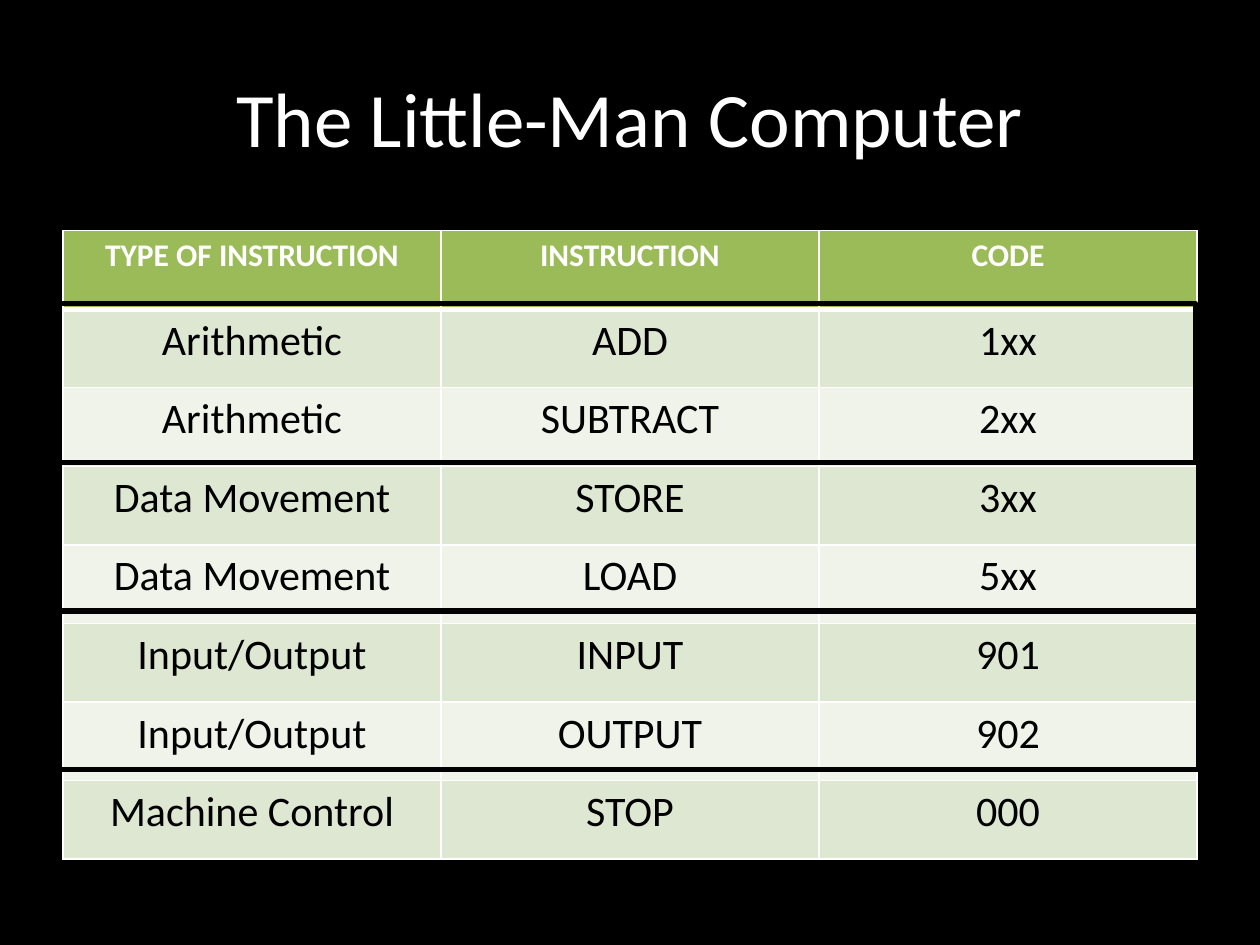
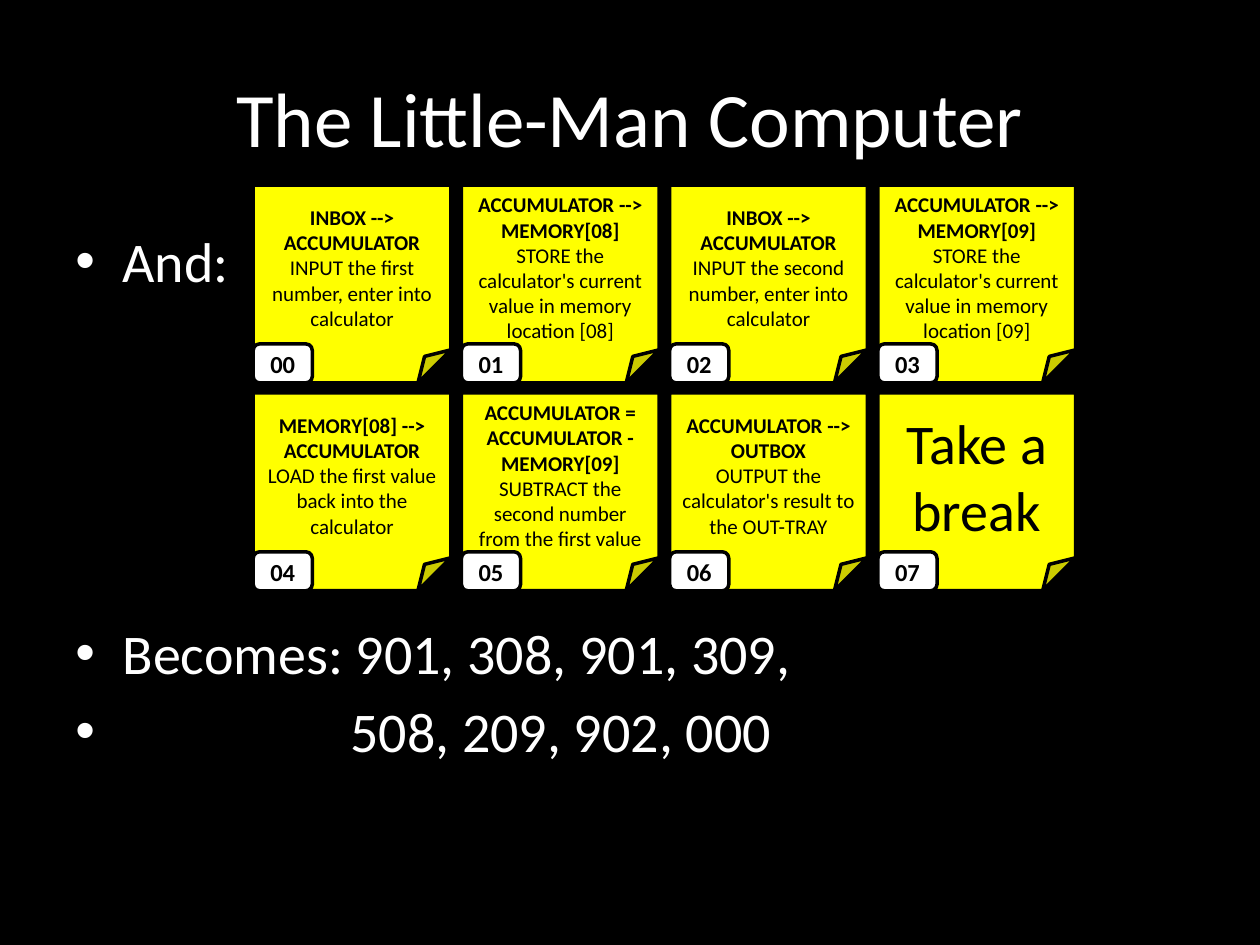
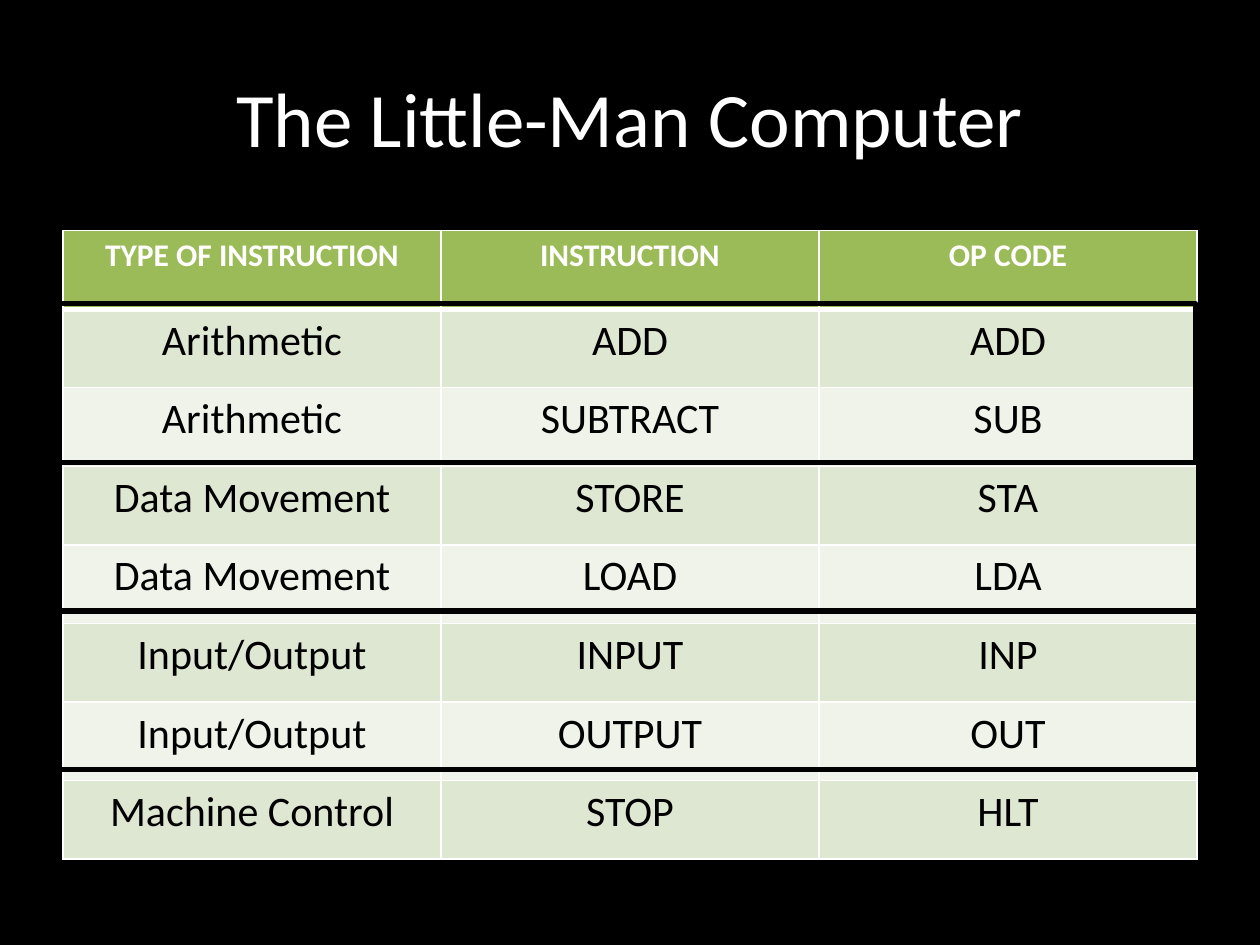
import pptx
import pptx.dml.color
import pptx.enum.shapes
import pptx.enum.text
import pptx.oxml
import pptx.oxml.ns
import pptx.util

Pt = pptx.util.Pt
SHAPE = pptx.enum.shapes.MSO_SHAPE
CENTER = pptx.enum.text.PP_ALIGN.CENTER
MIDDLE = pptx.enum.text.MSO_ANCHOR.MIDDLE
BLACK, WHITE, YELLOW = "000000", "FFFFFF", "FFFF00"
GREEN, BAND_DARK, BAND_LIGHT = "9BBB59", "DEE7D1", "EFF3EA"


def color(hex_text):
    return pptx.dml.color.RGBColor.from_string(hex_text)


def write(para, text, size, hex_text, bold=False, align=CENTER):
    para.alignment = align
    span = para.add_run()
    span.text = text
    span.font.name = "Calibri"
    span.font.size = Pt(size)
    span.font.bold = bold
    span.font.color.rgb = color(hex_text)


deck = pptx.Presentation()
deck.slide_width, deck.slide_height = Pt(720), Pt(540)
background = deck.slide_master.background.fill
background.solid()
background.fore_color.rgb = color(BLACK)

pages = []
for number in range(3):
    page = deck.slides.add_slide(deck.slide_layouts[5])
    title = page.shapes.title
    title.left, title.top, title.width, title.height = Pt(36), Pt(21.6), Pt(648), Pt(90)
    title.text_frame.vertical_anchor = MIDDLE
    write(title.text_frame.paragraphs[0], "The Little-Man Computer", 44, WHITE)
    pages.append(page)

instructions = [
    ("TYPE OF INSTRUCTION", "INSTRUCTION"),
    ("Arithmetic", "ADD"),
    ("Arithmetic", "SUBTRACT"),
    ("Data Movement", "STORE"),
    ("Data Movement", "LOAD"),
    ("Input/Output", "INPUT"),
    ("Input/Output", "OUTPUT"),
    ("Machine Control", "STOP"),
]
code_tables = [
    (pages[0], ["CODE", "1xx", "2xx", "3xx", "5xx", "901", "902", "000"]),
    (pages[2], ["OP CODE", "ADD", "SUB", "STA", "LDA", "INP", "OUT", "HLT"]),
]
group_frames = [(31, 173.5, 90.7), (32.4, 264.2, 85), (32.4, 349.2, 90.7)]

for page, codes in code_tables:
    table = page.shapes.add_table(8, 3, Pt(36), Pt(131.8), Pt(648), Pt(359.2)).table
    for row, (instruction, code) in enumerate(zip(instructions, codes)):
        table.rows[row].height = Pt(44.9)
        for column, text in enumerate([*instruction, code]):
            cell = table.cell(row, column)
            properties = cell._tc.get_or_add_tcPr()
            for side in "LRTB":
                thick = (row, side) in [(0, "B"), (1, "T")]
                properties.append(pptx.oxml.parse_xml(
                    f'<a:ln{side} {pptx.oxml.ns.nsdecls("a")} w="{Pt(3 if thick else 1)}">'
                    f'<a:solidFill><a:srgbClr val="{WHITE}"/></a:solidFill></a:ln{side}>'))
            cell.fill.solid()
            cell.fill.fore_color.rgb = color(
                GREEN if row == 0 else BAND_DARK if row % 2 else BAND_LIGHT)
            para = cell.text_frame.paragraphs[0]
            if row == 0:
                write(para, text, 18, WHITE, bold=True)
            else:
                write(para, text, 24, BLACK)
    for left, top, height in group_frames:
        frame = page.shapes.add_shape(SHAPE.RECTANGLE, Pt(left), Pt(top), Pt(652.3), Pt(height))
        frame.shadow.inherit = False
        frame.fill.background()
        frame.line.color.rgb = color(BLACK)
        frame.line.width = Pt(3)

page = pages[1]
box = page.shapes.add_textbox(Pt(36), Pt(126), Pt(648), Pt(356.4))
box.text_frame.word_wrap = True
bullets = [
    ("And:", 27, 0),
    ("Becomes: 901, 308, 901, 309,", 27, 185.5),
    ("508, 209, 902, 000", 157.2, 5.9),
]
for index, (text, indent, gap) in enumerate(bullets):
    para = box.text_frame.add_paragraph() if index else box.text_frame.paragraphs[0]
    properties = para._p.get_or_add_pPr()
    properties.set("marL", str(Pt(indent)))
    properties.set("indent", str(-Pt(indent)))
    for bullet in ('buClr {}><a:srgbClr val="FFFFFF"/></a:buClr>',
                   'buFont {} typeface="Arial"/>', 'buChar {} char="•"/>'):
        properties.append(pptx.oxml.parse_xml("<a:" + bullet.format(pptx.oxml.ns.nsdecls("a"))))
    if gap:
        para.space_before = Pt(gap)
    write(para, text, 32, WHITE, align=pptx.enum.text.PP_ALIGN.LEFT)

notes = [
    ("INBOX --> ACCUMULATOR", "INPUT the first number, enter into calculator"),
    ("ACCUMULATOR --> MEMORY[08]",
     "STORE the calculator's current value in memory location [08]"),
    ("INBOX --> ACCUMULATOR", "INPUT the second number, enter into calculator"),
    ("ACCUMULATOR --> MEMORY[09]",
     "STORE the calculator's current value in memory location [09]"),
    ("MEMORY[08] --> ACCUMULATOR", "LOAD the first value back into the calculator"),
    ("ACCUMULATOR = ACCUMULATOR - MEMORY[09]",
     "SUBTRACT the second number from the first value"),
    ("ACCUMULATOR --> OUTBOX", "OUTPUT the calculator's result to the OUT-TRAY"),
    ("", "Take a break"),
]
for address, (transfer, action) in enumerate(notes):
    left = 144.7 + address % 4 * 119
    top = 105.8 + address // 4 * 118.8
    note = page.shapes.add_shape(SHAPE.FOLDED_CORNER, Pt(left), Pt(top), Pt(113), Pt(113))
    label = page.shapes.add_shape(
        SHAPE.ROUNDED_RECTANGLE, Pt(left), Pt(top + 90.7), Pt(33.8), Pt(22.3))
    for shape, fill in ((note, YELLOW), (label, WHITE)):
        shape.shadow.inherit = False
        shape.fill.solid()
        shape.fill.fore_color.rgb = color(fill)
        shape.line.color.rgb = color(BLACK)
        shape.line.width = Pt(2)
        shape.text_frame.word_wrap = True
        shape.text_frame.vertical_anchor = MIDDLE
    para = note.text_frame.paragraphs[0]
    if transfer:
        write(para, transfer, 12, BLACK, bold=True)
        para = note.text_frame.add_paragraph()
    write(para, action, 12 if transfer else 32, BLACK)
    write(label.text_frame.paragraphs[0], f"{address:02}", 14, BLACK, bold=True)

deck.save("out.pptx")
